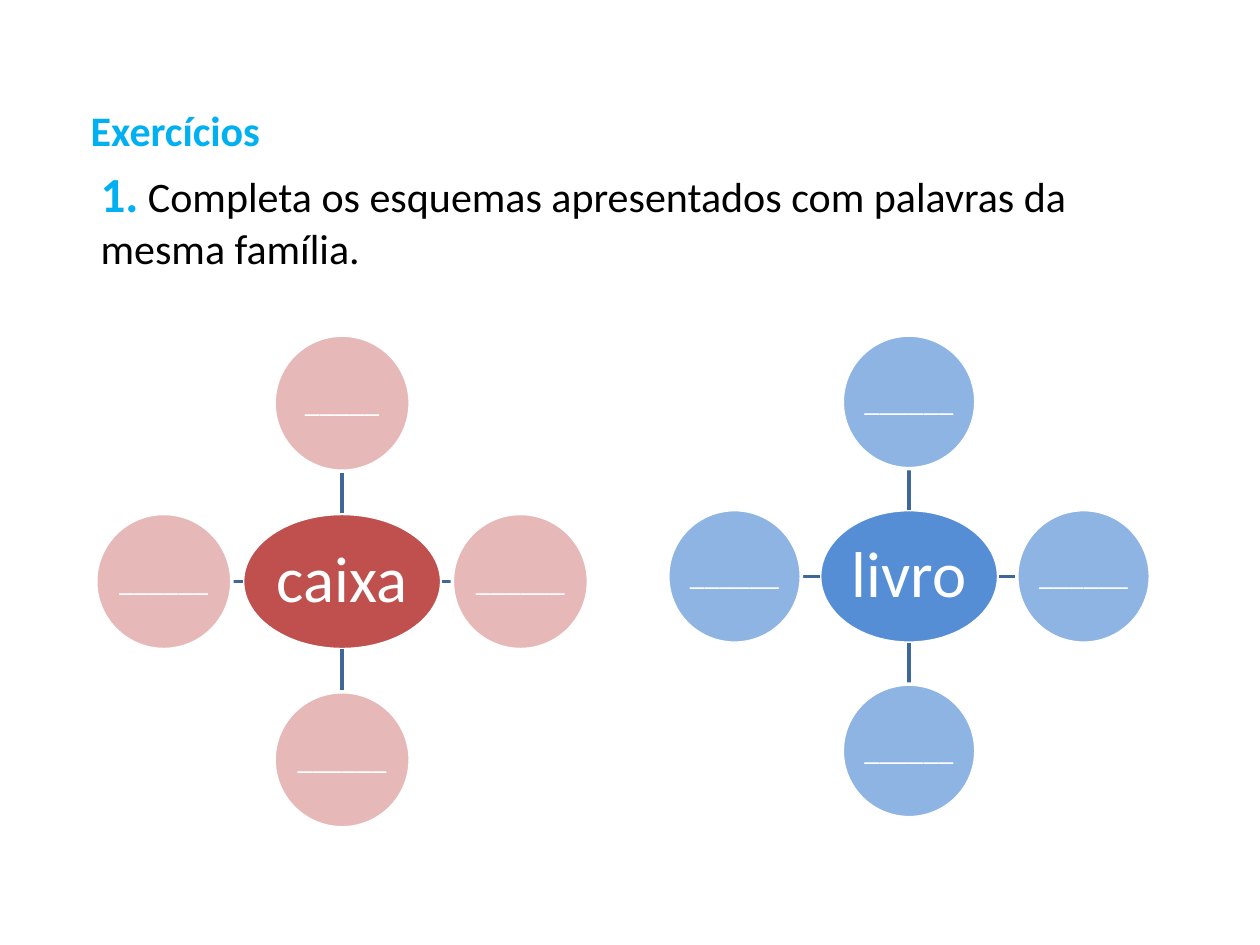
from lxml import etree
from pptx import Presentation
from pptx import util as u
from pptx.dml.color import RGBColor
from pptx.enum import shapes, text
from pptx.oxml.ns import qn

PX = 9144
COLORS = {
    "heading": "00B0F0", "body": "000000", "white": "FFFFFF", "link": "3F6797",
    "red": "C0504D", "pink": "E6B9B8", "blue": "558ED5", "sky": "8EB4E3",
}
DIRECTIONS = [(0, -1), (1, 0), (0, 1), (-1, 0)]
SHORT_BLANK, BLANK = "_" * 5, "_" * 6


def px(*lengths):
    """Turn px lengths into EMU."""
    return [u.Emu(round(length * PX)) for length in lengths]


def color(name):
    """Look up a named colour."""
    return RGBColor.from_string(COLORS[name])


def assign(target, **values):
    """Set each given attribute on the target."""
    for name, value in values.items():
        setattr(target, name, value)


def add_span(para, words, size, ink, bold=False):
    """Append formatted words to a paragraph."""
    span = para.add_run()
    span.text = words
    assign(span.font, name="Calibri", size=u.Pt(size), bold=bold)
    span.font.color.rgb = color(ink)


def add_heading(page, box):
    """Place the slide title in its box."""
    title = page.shapes.title
    assign(title, **dict(zip(("left", "top", "width", "height"), px(*box))))
    assign(title.text_frame, word_wrap=False, vertical_anchor=text.MSO_ANCHOR.TOP,
           auto_size=text.MSO_AUTO_SIZE.SHAPE_TO_FIT_TEXT)
    para = title.text_frame.paragraphs[0]
    para.alignment = text.PP_ALIGN.LEFT
    add_span(para, "Exercícios", 24, "heading", True)


def add_task(page, box):
    """Write the numbered task in its box."""
    frame = page.shapes.add_textbox(*px(*box)).text_frame
    assign(frame, word_wrap=True, auto_size=text.MSO_AUTO_SIZE.SHAPE_TO_FIT_TEXT)
    para = frame.paragraphs[0]
    add_span(para, "1.", 28, "heading", True)
    add_span(para, " ", 24, "heading", True)
    add_span(para, "Completa os esquemas apresentados com palavras da mesma família.",
             24, "body")


def add_bubble(group, center, size, words, points, fill, inset):
    """Draw a labelled ellipse around a centre point."""
    (x, y), (width, height) = center, size
    bubble = group.shapes.add_shape(
        shapes.MSO_SHAPE.OVAL, *px(x - width / 2, y - height / 2, width, height))
    bubble.shadow.inherit = False
    bubble.fill.solid()
    bubble.fill.fore_color.rgb = color(fill)
    bubble.line.color.rgb = color("white")
    bubble.line.width = u.Pt(2)
    frame = bubble.text_frame
    margins = ("margin_left", "margin_top", "margin_right", "margin_bottom")
    assign(frame, word_wrap=False, vertical_anchor=text.MSO_ANCHOR.MIDDLE,
           **dict.fromkeys(margins, px(inset)[0]))
    para = frame.paragraphs[0]
    assign(para, alignment=text.PP_ALIGN.CENTER, line_spacing=0.9)
    add_span(para, words, points, "white")


def add_link(group, start, end):
    """Join two points with a straight line."""
    link = group.shapes.add_connector(
        shapes.MSO_CONNECTOR.STRAIGHT, *px(*start, *end))
    link.line.color.rgb = color("link")
    link.line.width = u.Pt(2)
    etree.SubElement(link._element.spPr, qn("a:effectLst"))


def add_word_family(page, box, hub_width, ball, word, blanks, hub_fill, ball_fill):
    """Draw a word with four blanks around it, filling the box."""
    left, top, width, height = box
    x, y = left + width / 2, top + height / 2
    orbit = (width - ball) / 2
    group = page.shapes.add_group_shape()
    add_bubble(group, (x, y), (hub_width, ball), word, 37, hub_fill, 3)
    for (dx, dy), blank in zip(DIRECTIONS, blanks):
        inner = hub_width / 2 if dx else ball / 2
        outer = orbit - ball / 2
        add_link(group, (x + dx * inner, y + dy * inner),
                 (x + dx * outer, y + dy * outer))
        add_bubble(group, (x + dx * orbit, y + dy * orbit), (ball, ball),
                   blank, 17, ball_fill, 1)


def main():
    """Build and save the exercise slide."""
    deck = Presentation()
    deck.slide_width, deck.slide_height = px(1000, 750)
    page = deck.slides.add_slide(deck.slide_layouts.get_by_name("Title Only"))
    add_heading(page, (62, 78, 156, 50))
    add_task(page, (70, 125, 859, 98))
    add_word_family(page, (76, 266, 391, 391), 158, 108, "caixa",
                    [SHORT_BLANK] + [BLANK] * 3, "red", "pink")
    add_word_family(page, (530, 266, 383, 383), 142, 106, "livro",
                    [BLANK] * 4, "blue", "sky")
    deck.save("out.pptx")


if __name__ == "__main__":
    main()
